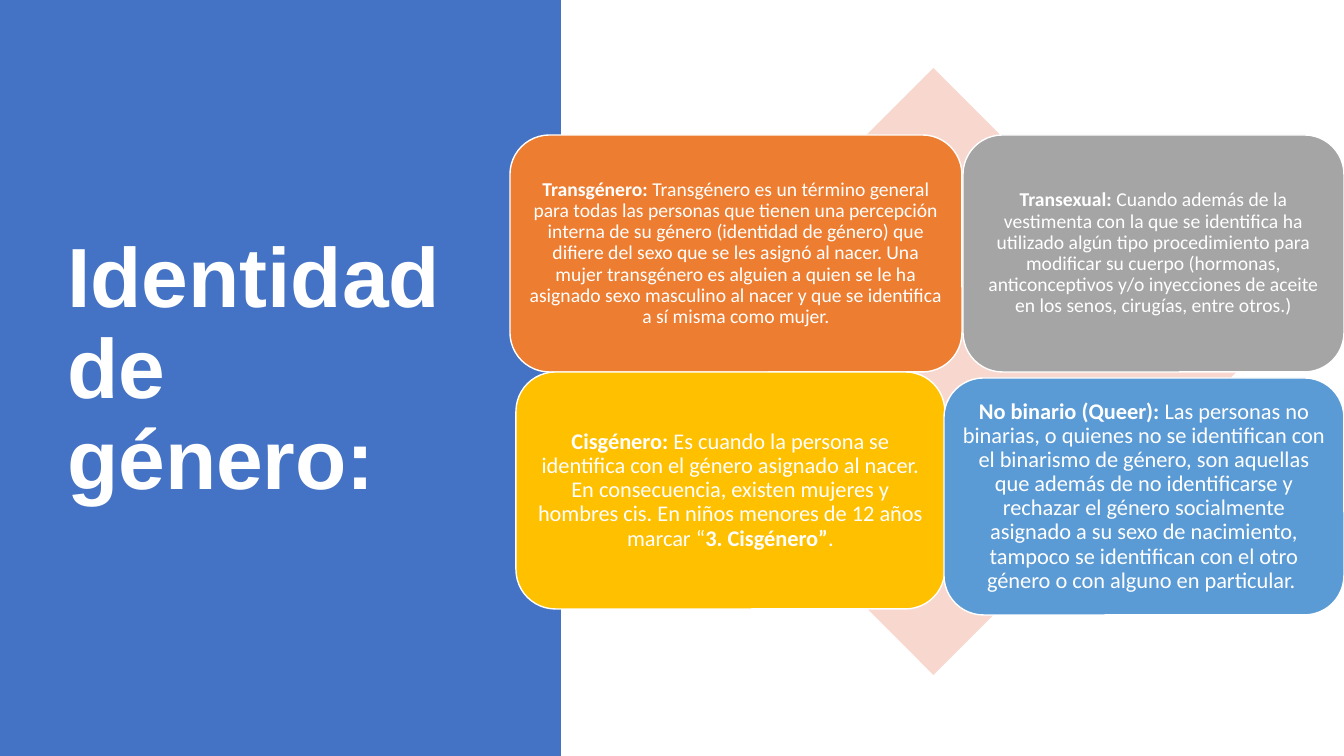
from pptx import Presentation
from pptx import util as u
from pptx.dml.color import RGBColor
from pptx.enum import shapes, text

PX = 914400 / 100.8
WHITE = "FFFFFF"


def px(*nums):
    return [u.Emu(round(n * PX)) for n in nums]


def color(code):
    return RGBColor.from_string(code)


class Deck:
    """Builds a slide from styled elements placed in px."""

    def __init__(self, wide, high):
        self.prs = Presentation()
        self.prs.slide_width, self.prs.slide_height = px(wide, high)
        self.slide = self.prs.slides.add_slide(self.prs.slide_layouts[5])

    def shape(self, kind, box, fill, line=None):
        item = self.slide.shapes.add_shape(kind, *px(*box))
        item.shadow.inherit = False
        item.fill.solid()
        item.fill.fore_color.rgb = color(fill)
        if line:
            item.line.color.rgb = color(line)
            item.line.width = u.Pt(1)
        else:
            item.line.fill.background()
        return item

    def style(self, para, face, size, align):
        para.alignment = align
        para.line_spacing = 0.9
        para.font.name = face
        para.font.size = u.Pt(size)
        para.font.color.rgb = color(WHITE)

    def title(self, box, words):
        item = self.slide.shapes.title
        item.left, item.top, item.width, item.height = px(*box)
        frame = item.text_frame
        frame.text = words
        frame.word_wrap = True
        frame.auto_size = text.MSO_AUTO_SIZE.NONE
        frame.vertical_anchor = text.MSO_ANCHOR.MIDDLE
        para = frame.paragraphs[0]
        self.style(para, "Arial", 60, text.PP_ALIGN.LEFT)
        para.font.bold = True
        self.slide.shapes.element.append(item.element)

    def card(self, box, fill, size, inset, words):
        item = self.shape(shapes.MSO_SHAPE.ROUNDED_RECTANGLE, box, fill, WHITE)
        frame = item.text_frame
        frame.word_wrap = True
        frame.vertical_anchor = text.MSO_ANCHOR.MIDDLE
        (frame.margin_left, frame.margin_top,
         frame.margin_right, frame.margin_bottom) = px(*[inset] * 4)
        para = frame.paragraphs[0]
        self.style(para, "Calibri", size, text.PP_ALIGN.CENTER)
        for i, part in enumerate(words.split("**")):
            if part:
                run = para.add_run()
                run.text = part
                run.font.bold = i % 2 == 1


CARDS = [
    ((510, 135, 452, 237), "ED7D31", 14, 6,
     "**Transgénero:** Transgénero es un término general para todas las "
     "personas que tienen una percepción interna de su género (identidad de "
     "género) que difiere del sexo que se les asignó al nacer. Una mujer "
     "transgénero es alguien a quien se le ha asignado sexo masculino al "
     "nacer y que se identifica a sí misma como mujer."),
    ((963, 135, 381, 237), "A5A5A5", 14, 6,
     "**Transexual:** Cuando además de la vestimenta con la que se identifica "
     "ha utilizado algún tipo procedimiento para modificar su cuerpo "
     "(hormonas, anticonceptivos y/o inyecciones de aceite en los senos, "
     "cirugías, entre otros.)"),
    ((516, 372, 429, 237), "FFC000", 16, 7,
     "**Cisgénero: **Es cuando la persona se identifica con el género "
     "asignado al nacer. En consecuencia, existen mujeres y hombres cis. En "
     "niños menores de 12 años marcar “**3. Cisgénero”**."),
    ((944, 378, 400, 237), "5B9BD5", 16, 7,
     "**No binario (Queer): **Las personas no binarias, o quienes no se "
     "identifican con el binarismo de género, son aquellas que además de no "
     "identificarse y rechazar el género socialmente asignado a su sexo de "
     "nacimiento, tampoco se identifican con el otro género o con alguno en "
     "particular. "),
]


def main():
    deck = Deck(1344, 756)
    deck.shape(shapes.MSO_SHAPE.RECTANGLE, (0, 0, 561, 756), "4472C4")
    deck.title((57, 68, 419, 607), "Identidad de género:")
    deck.shape(shapes.MSO_SHAPE.DIAMOND, (630, 68, 607, 607), "F8D7CE")
    for card in CARDS:
        deck.card(*card)
    deck.prs.save("out.pptx")


if __name__ == "__main__":
    main()
